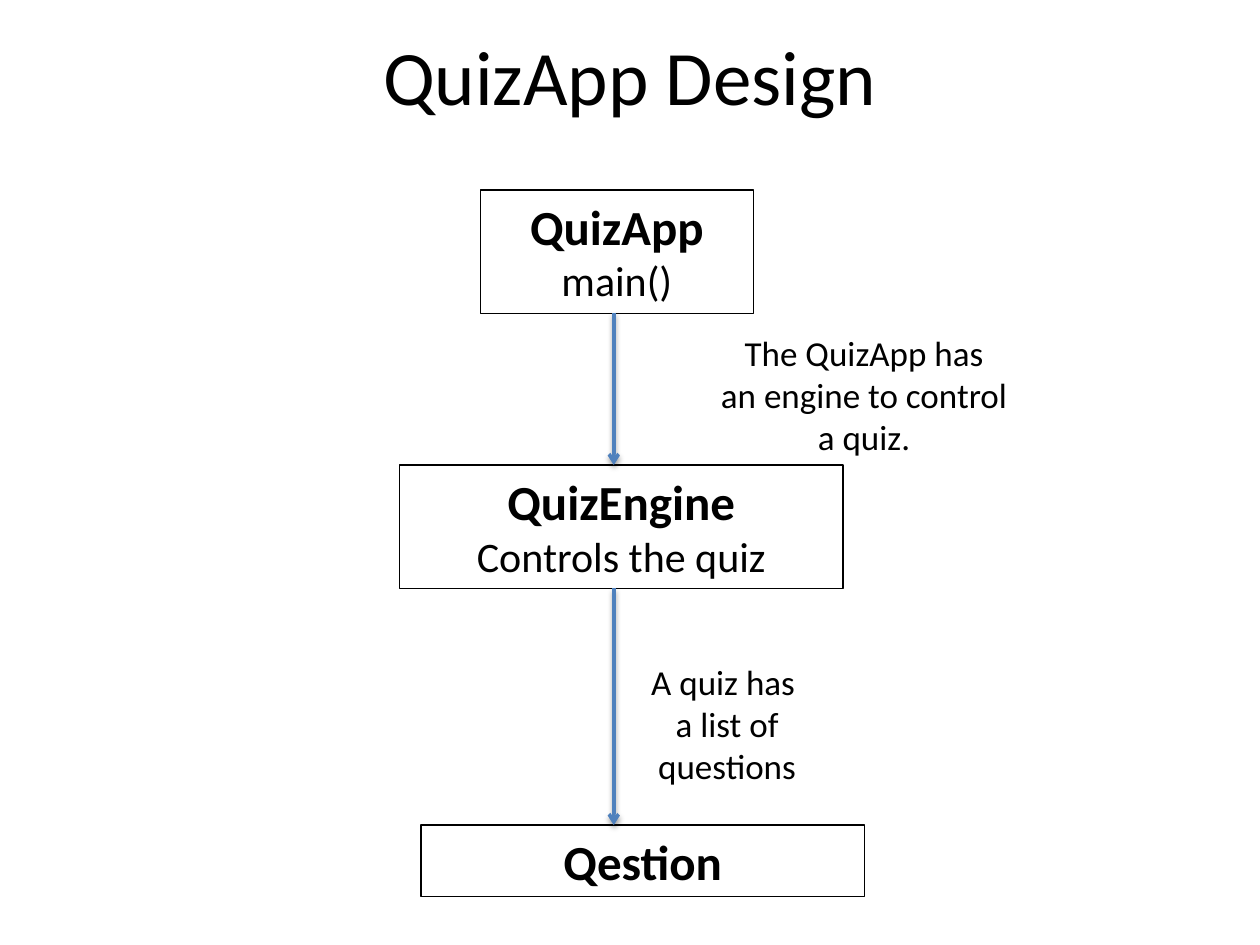
"""Build the QuizApp Design slide: three class boxes joined by arrows, with notes."""
from dataclasses import dataclass

from lxml import etree
from pptx import Presentation
from pptx.dml.color import RGBColor
from pptx.enum import shapes, text
from pptx.oxml import parse_xml
from pptx.oxml.ns import nsdecls, qn
from pptx.util import Pt


@dataclass(frozen=True)
class Theme:
    font: str = "Calibri"
    ink: RGBColor = RGBColor(0x00, 0x00, 0x00)
    arrow: RGBColor = RGBColor(0x4F, 0x81, 0xBD)
    title: int = 44
    name: int = 28
    detail: int = 24
    note: int = 20


theme = Theme()


def write(shape, lines, anchor=text.MSO_ANCHOR.TOP, wrap=True):
    frame = shape.text_frame
    frame.word_wrap = wrap
    frame.vertical_anchor = anchor
    for index, (words, size, bold) in enumerate(lines):
        paragraph = frame.add_paragraph() if index else frame.paragraphs[0]
        paragraph.alignment = text.PP_ALIGN.CENTER
        run = paragraph.add_run()
        run.text = words
        run.font.name = theme.font
        run.font.size = Pt(size)
        run.font.bold = bold
        run.font.color.rgb = theme.ink


presentation = Presentation()
presentation.slide_width, presentation.slide_height = Pt(720), Pt(540)
slide = presentation.slides.add_slide(presentation.slide_layouts[5])

title = slide.shapes.title
title.left, title.top, title.width, title.height = Pt(36), Pt(12.25), Pt(648), Pt(60.5)
write(title, [("QuizApp Design", theme.title, False)], anchor=text.MSO_ANCHOR.MIDDLE)

boxes = [
    (274.5, 108.5, 156, 70.5, "QuizApp", "main()"),
    (228.25, 265.75, 253.5, 70.5, "QuizEngine", "Controls the quiz"),
    (240.5, 471.5, 253.5, 41, "Qestion", None),
]
for left, top, width, height, name, detail in boxes:
    box = slide.shapes.add_shape(
        shapes.MSO_SHAPE.RECTANGLE, Pt(left), Pt(top), Pt(width), Pt(height))
    box.shadow.inherit = False
    box.fill.background()
    box.line.color.rgb = theme.ink
    box.line.width = Pt(0.75)
    lines = [(name, theme.name, True)]
    if detail:
        lines.append((detail, theme.detail, False))
    write(box, lines)

notes = [
    (367, 186, ["The QuizApp has", "an engine to control", "a quiz."]),
    (288.75, 373.75, ["A quiz has ", "a list of", "questions"]),
]
for left, top, lines in notes:
    note = slide.shapes.add_textbox(Pt(left), Pt(top), Pt(253.5), Pt(80))
    write(note, [(words, theme.note, False) for words in lines])

arrow_x = Pt(350.75)
for upper, lower in zip(boxes, boxes[1:]):
    arrow = slide.shapes.add_connector(
        shapes.MSO_CONNECTOR.STRAIGHT,
        arrow_x, Pt(upper[1] + upper[3]), arrow_x, Pt(lower[1]))
    arrow.line.color.rgb = theme.arrow
    arrow.line.width = Pt(2)
    etree.SubElement(arrow.line._get_or_add_ln(), qn("a:tailEnd"), type="arrow")
    arrow._element.spPr.append(parse_xml(
        f'<a:effectLst {nsdecls("a")}>'
        f'<a:outerShdw blurRad="{Pt(3.1)}" dist="{Pt(1.6)}" dir="5400000" rotWithShape="0">'
        f'<a:srgbClr val="{theme.ink}"><a:alpha val="38000"/></a:srgbClr>'
        '</a:outerShdw></a:effectLst>'))

presentation.save("out.pptx")
